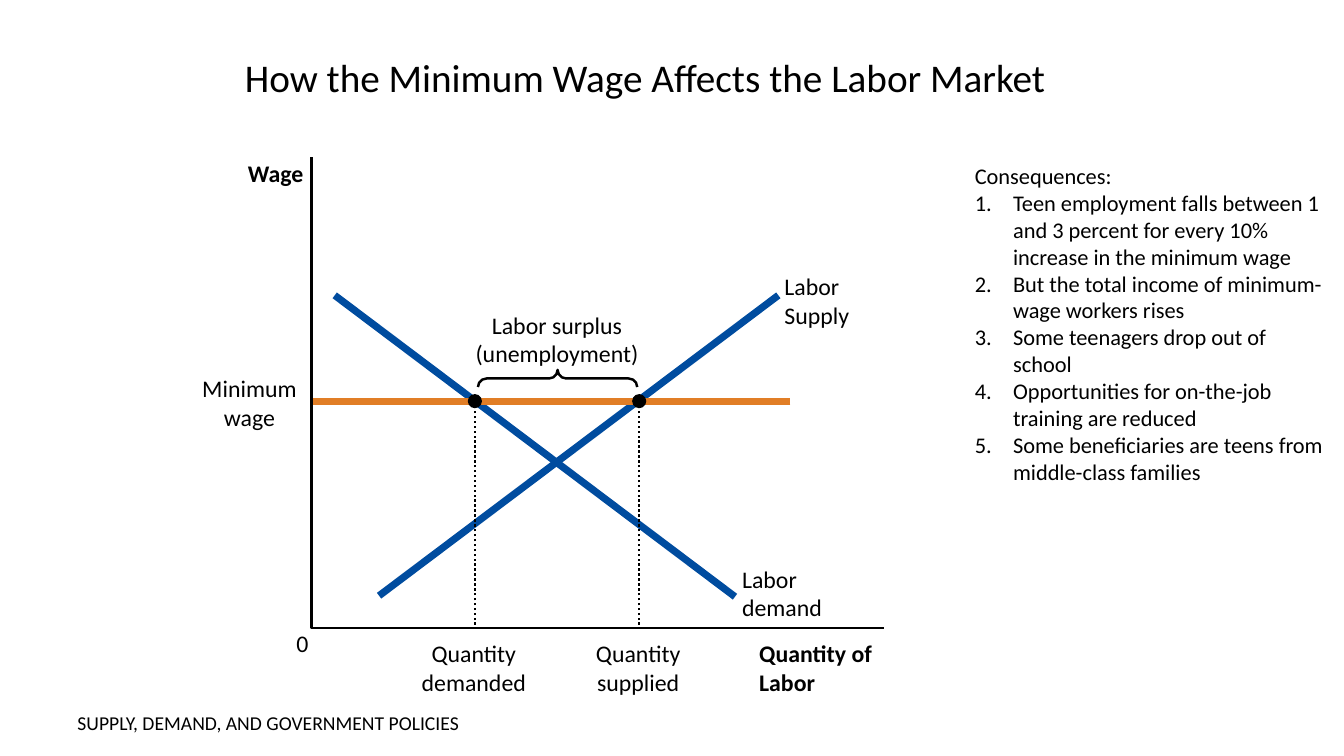
from lxml.etree import SubElement
from pptx import Presentation
from pptx.dml.color import RGBColor
from pptx.enum.dml import MSO_LINE
from pptx.enum.shapes import MSO_CONNECTOR, MSO_SHAPE
from pptx.enum.text import MSO_ANCHOR, MSO_AUTO_SIZE, PP_ALIGN
from pptx.oxml.ns import qn
from pptx.util import Pt

SCALE = 9144
FONT = "Calibri"
BLACK, BLUE, ORANGE = "000000", "004C9F", "E17E26"
LEFT, CENTER, RIGHT = PP_ALIGN.LEFT, PP_ALIGN.CENTER, PP_ALIGN.RIGHT
CONSEQUENCES = [
    "Teen employment falls between 1 and 3 percent for every 10% increase in the minimum wage",
    "But the total income of minimum-wage workers rises",
    "Some teenagers drop out of school",
    "Opportunities for on-the-job training are reduced",
    "Some beneficiaries are teens from middle-class families",
]


def px(*lengths):
    return [length * SCALE for length in lengths]


def color(hex_string):
    return RGBColor.from_string(hex_string)


def write(frame, lines, size, align=LEFT, bold=False):
    frame.text = "\n".join(lines)
    for para in frame.paragraphs:
        para.alignment = align
        for span in para.runs:
            span.font.name = FONT
            span.font.size = Pt(size)
            span.font.bold = bold
            span.font.color.rgb = color(BLACK)


def add_label(page, left, top, width, lines, align=LEFT, bold=False):
    box = page.shapes.add_textbox(*px(left, top, width, 29 * len(lines)))
    frame = box.text_frame
    frame.margin_left = frame.margin_right = frame.margin_top = frame.margin_bottom = 0
    frame.word_wrap = False
    frame.auto_size = MSO_AUTO_SIZE.SHAPE_TO_FIT_TEXT
    write(frame, lines, 17, align, bold)


def style_line(line, hex_string, weight):
    line.color.rgb = color(hex_string)
    line.width = Pt(weight)


def add_segment(page, start, end, hex_string, weight, dash=None):
    segment = page.shapes.add_connector(MSO_CONNECTOR.STRAIGHT, *px(*start, *end))
    style_line(segment.line, hex_string, weight)
    if dash:
        segment.line.dash_style = dash
    SubElement(segment._element.spPr, qn("a:effectLst"))


def add_surplus_brace(page, left, top, width, height):
    middle_x, middle_y = left + width / 2, top + height / 2
    box = [round(length) for length in px(middle_x - height / 2, middle_y - width / 2, height, width)]
    brace = page.shapes.add_shape(MSO_SHAPE.LEFT_BRACE, *box)
    brace.rotation = 90
    brace.adjustments[0] = 0.5
    brace.shadow.inherit = False
    brace.fill.background()
    style_line(brace.line, BLACK, 1.75)


def add_quantity(page, x, wage_y, axis_y, name):
    add_label(page, x - 53, axis_y + 11, 104, ["Quantity", name], CENTER)
    add_segment(page, (x, axis_y - 3), (x, wage_y), BLACK, 1.75, MSO_LINE.ROUND_DOT)
    dot = page.shapes.add_shape(MSO_SHAPE.OVAL, *px(x - 7, wage_y - 7, 14, 14))
    dot.shadow.inherit = False
    dot.fill.solid()
    dot.fill.fore_color.rgb = color(BLACK)
    dot.line.fill.background()


def add_labor_market(page, left, top, width, height):
    right, bottom = left + width, top + height
    wage_y = top + 242
    demanded_x, supplied_x = left + 162, left + 325

    add_label(page, right - 124, bottom + 11, 113, ["Quantity of", "Labor"], bold=True)
    add_label(page, left - 68, top + 1, 60, ["Wage"], RIGHT, bold=True)
    add_label(page, left - 15, bottom + 1, 12, ["0"])

    add_segment(page, (left + 67, bottom - 32), (left + 463, top + 137), BLUE, 5.13)
    add_label(page, left + 469, top + 114, 65, ["Labor", "Supply"])
    add_surplus_brace(page, demanded_x + 3, wage_y - 31, 158, 17)
    add_label(page, demanded_x, wage_y - 90, 163, ["Labor surplus", "(unemployment)"], CENTER)
    add_label(page, left + 427, bottom - 63, 80, ["Labor", "demand"])
    add_segment(page, (left + 420, bottom - 31), (left + 23, top + 137), BLUE, 5.13)
    add_segment(page, (left + 475, wage_y), (left, wage_y), ORANGE, 5.13)
    add_label(page, left - 110, wage_y - 27, 97, ["Minimum", "wage"], CENTER)

    add_quantity(page, demanded_x, wage_y, bottom, "demanded")
    add_quantity(page, supplied_x, wage_y, bottom, "supplied")

    builder = page.shapes.build_freeform(left, top, scale=SCALE)
    builder.add_line_segments([(left, bottom), (right, bottom)], close=False)
    axes = builder.convert_to_shape()
    axes.shadow.inherit = False
    axes.fill.background()
    style_line(axes.line, BLACK, 1.75)


def add_consequences(page, left, top, width, height):
    box = page.shapes.add_textbox(*px(left, top, width, height))
    frame = box.text_frame
    frame.word_wrap = True
    write(frame, ["Consequences:"] + CONSEQUENCES, 16)
    for para in frame.paragraphs[1:]:
        properties = para._p.get_or_add_pPr()
        properties.set("marL", str(38 * SCALE))
        properties.set("indent", str(-38 * SCALE))
        SubElement(properties, qn("a:buFont"), typeface="+mj-lt")
        SubElement(properties, qn("a:buAutoNum"), type="arabicPeriod")


def add_title(page, left, top, width, height):
    title = page.shapes.title
    title.left, title.top, title.width, title.height = px(left, top, width, height)
    frame = title.text_frame
    write(frame, ["How the Minimum Wage Affects the Labor Market"], 28)
    frame.vertical_anchor = MSO_ANCHOR.MIDDLE
    frame.paragraphs[0].line_spacing = 0.8


def add_chapter_name(page, left, top, width, height):
    box = page.shapes.add_textbox(*px(left, top, width, height))
    box.text_frame.word_wrap = True
    write(box.text_frame, ["SUPPLY, DEMAND, AND GOVERNMENT POLICIES"], 14)


def main():
    deck = Presentation()
    deck.slide_width, deck.slide_height = px(1333, 750)
    page = deck.slides.add_slide(deck.slide_layouts[5])
    add_title(page, 233, 46, 884, 70)
    add_labor_market(page, 309, 156, 568, 467)
    add_consequences(page, 957, 156, 366, 333)
    add_chapter_name(page, 67, 700, 500, 40)
    deck.save("out.pptx")


if __name__ == "__main__":
    main()
